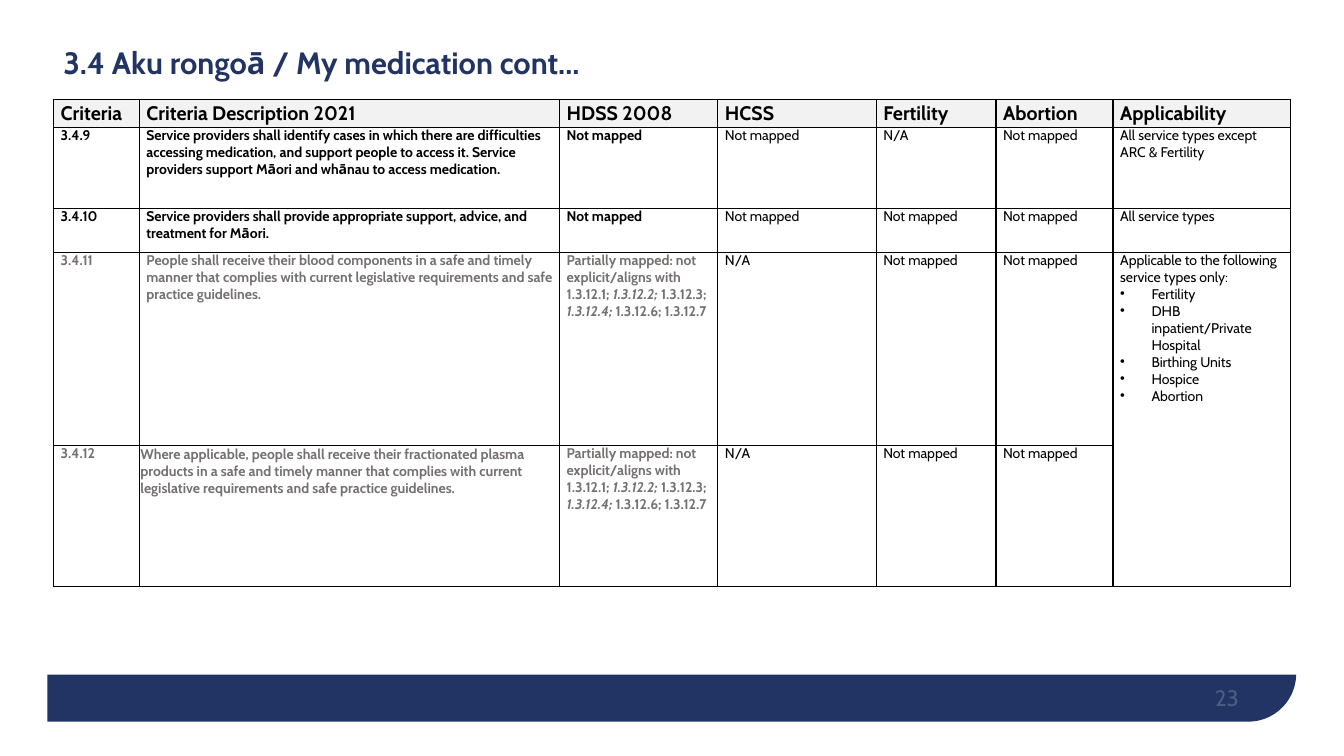
import dataclasses

import lxml.etree
import pptx
import pptx.dml.color
import pptx.enum.shapes
import pptx.enum.text
import pptx.oxml
import pptx.oxml.ns
import pptx.util

Cm = pptx.util.Cm
Pt = pptx.util.Pt
Anchor = pptx.enum.text.MSO_ANCHOR
Align = pptx.enum.text.PP_ALIGN
Preset = pptx.enum.shapes.MSO_SHAPE
qn = pptx.oxml.ns.qn


@dataclasses.dataclass(frozen=True)
class Theme:
    """Colours, font and type sizes of the slide."""
    font: str = "Cabin"
    navy: str = "213463"
    white: str = "FFFFFF"
    black: str = "000000"
    grey: str = "767171"
    header_fill: str = "F2F2F2"
    title_size: int = 22
    number_size: int = 16
    header_size: int = 14
    body_size: int = 10


class SlideBuilder:
    """Draws styled elements on the current slide."""

    def __init__(self, slide, theme):
        self.slide = slide
        self.theme = theme

    def add_runs(self, paragraph, text, size, color, bold=False):
        """Add text in which asterisks enclose italic parts."""
        for index, part in enumerate(text.split("*")):
            run = paragraph.add_run()
            run.text = part
            run.font.name = self.theme.font
            run.font.size = Pt(size)
            run.font.bold = bold
            run.font.italic = index % 2 == 1
            run.font.color.rgb = pptx.dml.color.RGBColor.from_string(color)

    def block(self, preset, left, top, width, height, color):
        """Add a filled shape without outline."""
        shape = self.slide.shapes.add_shape(preset, Cm(left), Cm(top), Cm(width), Cm(height))
        shape.shadow.inherit = False
        shape.fill.solid()
        shape.fill.fore_color.rgb = pptx.dml.color.RGBColor.from_string(color)
        shape.line.fill.background()
        return shape

    def text(self, left, top, width, height, text, size, color, bold=False,
             anchor=Anchor.MIDDLE, align=Align.LEFT, inset=0.25):
        """Add a wrapped text box and return its paragraph."""
        box = self.slide.shapes.add_textbox(Cm(left), Cm(top), Cm(width), Cm(height))
        frame = box.text_frame
        frame.word_wrap = True
        frame.vertical_anchor = anchor
        frame.margin_left = frame.margin_right = Cm(inset)
        frame.margin_top = frame.margin_bottom = Cm(inset / 2)
        paragraph = frame.paragraphs[0]
        paragraph.alignment = align
        self.add_runs(paragraph, text, size, color, bold)
        return paragraph

    def fade(self, paragraph, percent):
        """Set the opacity of a paragraph's text."""
        for color in paragraph._p.iter(qn("a:srgbClr")):
            lxml.etree.SubElement(color, qn("a:alpha"), val=str(percent * 1000))

    def border(self, cell):
        """Draw a thin line on each side of a cell."""
        properties = cell._tc.get_or_add_tcPr()
        for side in ("a:lnL", "a:lnR", "a:lnT", "a:lnB"):
            line = lxml.etree.SubElement(properties, qn(side), w=str(Pt(1)))
            fill = lxml.etree.SubElement(line, qn("a:solidFill"))
            lxml.etree.SubElement(fill, qn("a:srgbClr"), val=self.theme.black)

    def bullet(self, paragraph):
        """Give a paragraph a hanging bullet."""
        properties = paragraph._p.get_or_add_pPr()
        properties.set("marL", str(Cm(0.79)))
        properties.set("indent", str(-Cm(0.79)))
        lxml.etree.SubElement(properties, qn("a:buChar"), char="•")

    def cell(self, cell, lines, size, color, bold, fill=None):
        """Fill a cell; lines after the first become bullets."""
        cell.margin_left = cell.margin_right = Cm(0.18)
        cell.margin_top = cell.margin_bottom = 0
        self.border(cell)
        if fill:
            cell.vertical_anchor = Anchor.MIDDLE
            cell.fill.solid()
            cell.fill.fore_color.rgb = pptx.dml.color.RGBColor.from_string(fill)
        else:
            cell.fill.background()
        for index, line in enumerate(lines):
            frame = cell.text_frame
            paragraph = frame.add_paragraph() if index else frame.paragraphs[0]
            if index:
                self.bullet(paragraph)
            self.add_runs(paragraph, line, size, color, bold)

    def table(self, left, top, widths, heights, rows, grey_rows, bold_columns):
        """Add the criteria table and return it."""
        theme = self.theme
        table = self.slide.shapes.add_table(
            len(rows), len(widths), Cm(left), Cm(top), Cm(sum(widths)), Cm(sum(heights))).table
        table.first_row = table.horz_banding = False
        for column, width in zip(table.columns, widths):
            column.width = Cm(width)
        for row, height in zip(table.rows, heights):
            row.height = Cm(height)
        for row_index, row in enumerate(rows):
            for column_index, content in enumerate(row):
                cell = table.cell(row_index, column_index)
                lines = content.splitlines()
                if row_index == 0:
                    self.cell(cell, lines, theme.header_size, theme.black, True, theme.header_fill)
                    continue
                bold = column_index < bold_columns
                color = theme.grey if bold and row_index in grey_rows else theme.black
                self.cell(cell, lines, theme.body_size, color, bold)
        return table


UNMAPPED = "Not mapped"
PARTIAL = ("Partially mapped: not explicit/aligns with 1.3.12.1; *1.3.12.2;* 1.3.12.3; "
           "*1.3.12.4;* 1.3.12.6; 1.3.12.7")
CRITERIA = [
    ["Criteria", "Criteria Description 2021", "HDSS 2008", "HCSS", "Fertility", "Abortion",
     "Applicability"],
    ["3.4.9", "Service providers shall identify cases in which there are difficulties accessing "
     "medication, and support people to access it. Service providers support Māori and whānau "
     "to access medication.",
     UNMAPPED, UNMAPPED, "N/A", UNMAPPED, "All service types except ARC & Fertility"],
    ["3.4.10", "Service providers shall provide appropriate support, advice, and treatment "
     "for Māori.",
     UNMAPPED, UNMAPPED, UNMAPPED, UNMAPPED, "All service types"],
    ["3.4.11", "People shall receive their blood components in a safe and timely manner that "
     "complies with current legislative requirements and safe practice guidelines.",
     PARTIAL, "N/A", UNMAPPED, UNMAPPED,
     "Applicable to the following service types only:\nFertility\n"
     "DHB inpatient/Private Hospital\nBirthing Units\nHospice\nAbortion"],
    ["3.4.12", "Where applicable, people shall receive their fractionated plasma products in a "
     "safe and timely manner that complies with current legislative requirements and safe "
     "practice guidelines.",
     PARTIAL, "N/A", UNMAPPED, UNMAPPED, ""],
]
COLUMN_WIDTHS = [2.16, 10.59, 3.99, 3.99, 3.02, 2.95, 4.47]
ROW_HEIGHTS = [0.7, 2.04, 1.11, 4.86, 3.56]


def main():
    """Build and save the slide."""
    presentation = pptx.Presentation()
    presentation.slide_width = Cm(33.87)
    presentation.slide_height = Cm(19.05)
    theme = Theme()
    builder = SlideBuilder(
        presentation.slides.add_slide(presentation.slide_layouts[6]), theme)

    panel_width, panel_height = 31.47, 17.25
    center_x, center_y = 16.93, 9.56
    panel = builder.block(Preset.ROUND_1_RECTANGLE, center_x - panel_height / 2,
                          center_y - panel_width / 2, panel_height, panel_width, theme.navy)
    panel.rotation = 90
    panel.adjustments[0] = 0.07
    builder.block(Preset.RECTANGLE, 0, 0, 33.87, 17, theme.white)

    number = builder.text(23.6, 16.89, 7.62, 1.02, "23", theme.number_size, theme.white,
                          anchor=Anchor.BOTTOM, align=Align.RIGHT, inset=0)
    builder.fade(number, 20)
    title = builder.text(1.35, 1.02, 30.56, 1.22, "3.4 Aku rongoā / My medication cont...",
                         theme.title_size, theme.navy, bold=True)
    title.line_spacing = 0.9

    table = builder.table(1.35, 2.51, COLUMN_WIDTHS, ROW_HEIGHTS, CRITERIA,
                          grey_rows=(3, 4), bold_columns=3)
    table.cell(3, 6).merge(table.cell(4, 6))
    plasma = table.cell(4, 1)
    plasma.margin_left = plasma.margin_right = plasma.margin_top = Cm(0.03)

    presentation.save("out.pptx")


if __name__ == "__main__":
    main()
